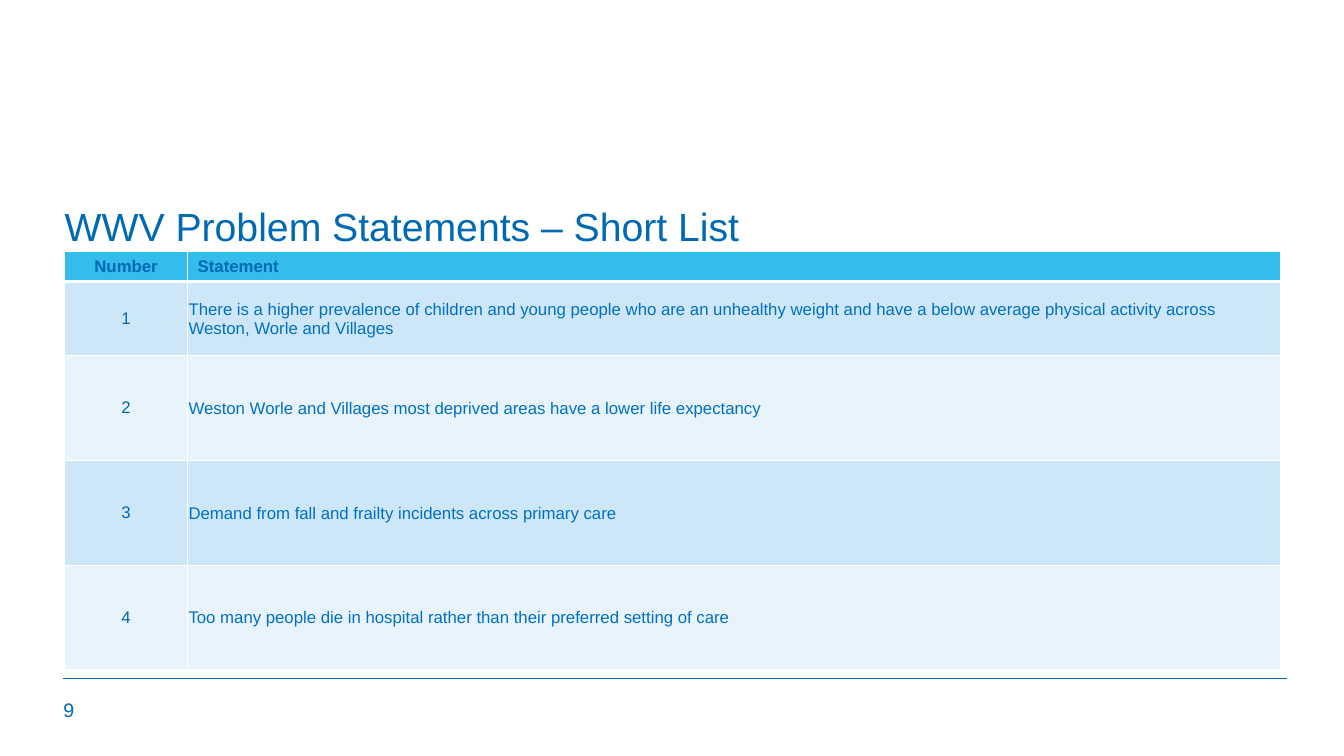
import pptx
import pptx.dml.color
import pptx.enum.shapes
import pptx.enum.text
import pptx.oxml
import pptx.oxml.ns
import pptx.util

Pt = pptx.util.Pt
ALIGN = pptx.enum.text.PP_ALIGN
COLORS = {
    "blue": "0069B3",
    "statement": "0070C0",
    "header": "34BCED",
    "odd": "CEE7F8",
    "even": "E8F3FC",
    "border": "FFFFFF",
}
STATEMENTS = [
    "There is a higher prevalence of children and young people who are an unhealthy weight "
    "and have a below average physical activity across Weston, Worle and Villages",
    "Weston Worle and Villages most deprived areas have a lower life expectancy",
    "Demand from fall and frailty incidents across primary care",
    "Too many people die in hospital rather than their preferred setting of care",
]
COLUMN_WIDTHS = [87.8, 780.6]
ROW_HEIGHTS = [20.9, 52.6, 75, 75, 75]


def rgb(name):
    """Return the named colour."""
    return pptx.dml.color.RGBColor.from_string(COLORS[name])


def write(paragraph, text, size, color="blue", bold=False, align=ALIGN.LEFT):
    """Add one formatted run to a paragraph."""
    paragraph.alignment = align
    run = paragraph.add_run()
    run.text = text
    run.font.name = "Arial"
    run.font.size = Pt(size)
    run.font.bold = bold
    run.font.color.rgb = rgb(color)


def add_label(slide, left, top, width, height, text, size):
    """Place a text box without margins."""
    frame = slide.shapes.add_textbox(Pt(left), Pt(top), Pt(width), Pt(height)).text_frame
    frame.word_wrap = True
    frame.margin_left = frame.margin_right = frame.margin_top = frame.margin_bottom = 0
    write(frame.paragraphs[0], text, size)


def add_border(cell, side, width):
    """Draw one white edge of a cell."""
    cell._tc.get_or_add_tcPr().append(pptx.oxml.parse_xml(
        f'<a:ln{side} {pptx.oxml.ns.nsdecls("a")} w="{Pt(width)}"><a:solidFill>'
        f'<a:srgbClr val="{COLORS["border"]}"/></a:solidFill></a:ln{side}>'))


def add_statements(slide, left, top, width, height):
    """Place the table of numbered problem statements."""
    rows = [("Number", "Statement")] + [(str(n), s) for n, s in enumerate(STATEMENTS, 1)]
    table = slide.shapes.add_table(
        len(rows), len(COLUMN_WIDTHS), Pt(left), Pt(top), Pt(width), Pt(height)).table
    for column, column_width in zip(table.columns, COLUMN_WIDTHS):
        column.width = Pt(column_width)
    for r, texts in enumerate(rows):
        table.rows[r].height = Pt(ROW_HEIGHTS[r])
        header = r == 0
        for c, text in enumerate(texts):
            cell = table.cell(r, c)
            statement = c == 1 and not header
            cell.vertical_anchor = pptx.enum.text.MSO_ANCHOR.MIDDLE
            if statement:
                cell.margin_left = cell.margin_right = cell.margin_top = Pt(0.7)
                cell.margin_bottom = 0
            for side in "LRTB":
                thick = (side == "B" and header) or (side == "T" and r == 1)
                add_border(cell, side, 3 if thick else 1)
            cell.fill.solid()
            cell.fill.fore_color.rgb = rgb("header" if header else "odd" if r % 2 else "even")
            write(cell.text_frame.paragraphs[0], text, 12,
                  "statement" if statement else "blue", header,
                  ALIGN.LEFT if c else ALIGN.CENTER)


def add_footer(slide, left, top, width, number):
    """Place the footer rule with the page number below it."""
    rule = slide.shapes.add_connector(
        pptx.enum.shapes.MSO_CONNECTOR.STRAIGHT, Pt(left), Pt(top), Pt(left + width), Pt(top))
    rule.line.color.rgb = rgb("blue")
    rule.line.width = Pt(1)
    rule._element.spPr.append(pptx.oxml.parse_xml(
        f'<a:effectLst {pptx.oxml.ns.nsdecls("a")}/>'))
    add_label(slide, left, top + 13.7, 34, 29, number, 14)


def main():
    """Build and save the slide."""
    deck = pptx.Presentation()
    deck.slide_width, deck.slide_height = Pt(960), Pt(540)
    slide = deck.slides.add_slide(deck.slide_layouts[6])
    add_footer(slide, 45.3, 484.6, 874.2, "9")
    add_statements(slide, 46.2, 179.5, sum(COLUMN_WIDTHS), sum(ROW_HEIGHTS))
    add_label(slide, 46.2, 144.7, 551, 26, "WWV Problem Statements – Short List", 28)
    deck.save("out.pptx")


if __name__ == "__main__":
    main()
